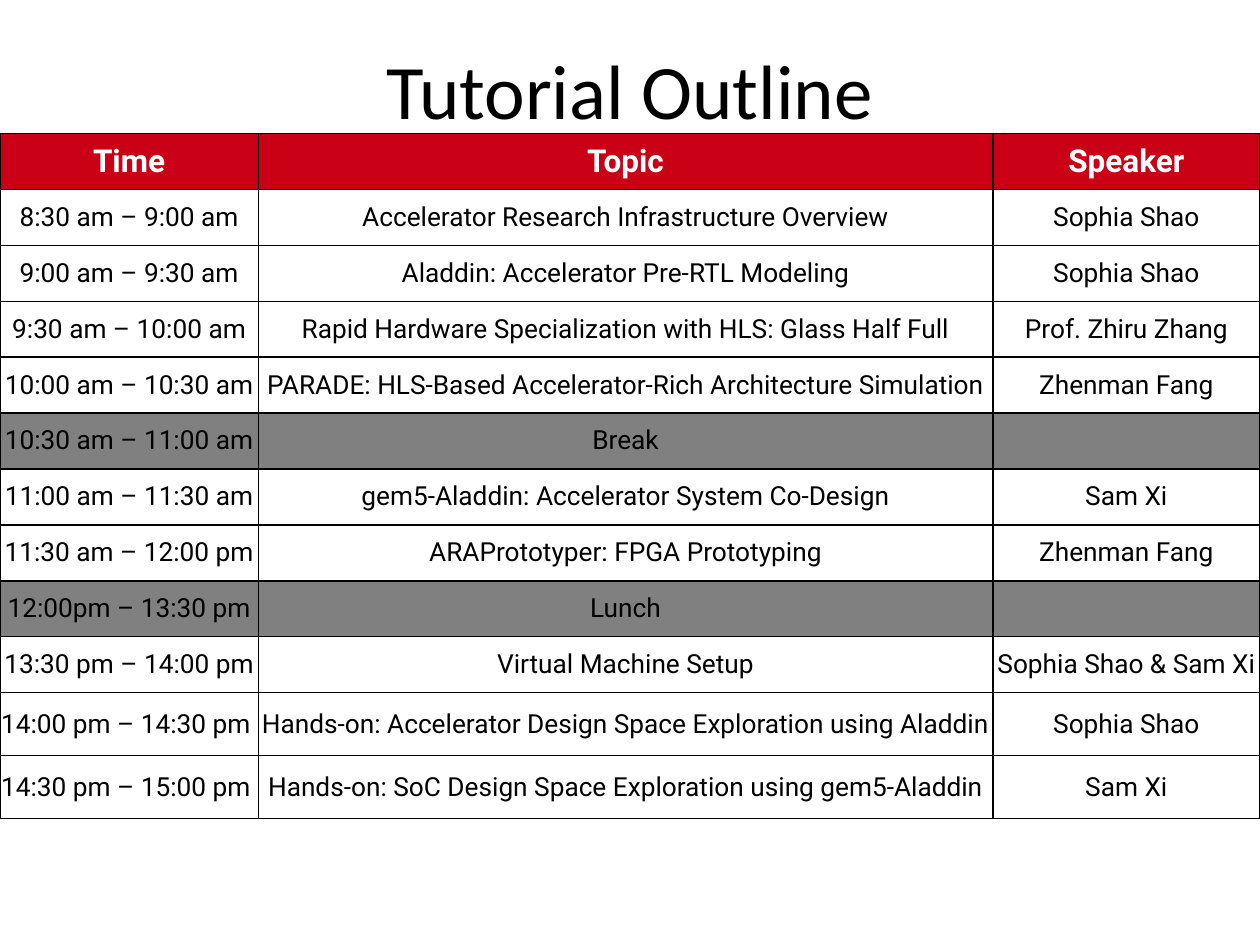
from lxml import etree
from pptx import Presentation
from pptx.dml.color import RGBColor
from pptx.enum.text import MSO_ANCHOR, PP_ALIGN
from pptx.oxml.ns import qn
from pptx.util import Inches, Pt

CENTER = PP_ALIGN.CENTER
MIDDLE = MSO_ANCHOR.MIDDLE
RED = RGBColor(0xC9, 0x00, 0x16)
GRAY = RGBColor(0x80, 0x80, 0x80)
BLACK = RGBColor(0, 0, 0)
WHITE = RGBColor(0xFF, 0xFF, 0xFF)

TITLE = "Tutorial Outline"
HEAD = ("Time", "Topic", "Speaker")
TALKS = [
    ("8:30 am – 9:00 am", "Accelerator Research Infrastructure Overview", "Sophia Shao"),
    ("9:00 am – 9:30 am", "Aladdin: Accelerator Pre-RTL Modeling", "Sophia Shao"),
    ("9:30 am – 10:00 am", "Rapid Hardware Specialization with HLS: Glass Half Full",
     "Prof. Zhiru Zhang"),
    ("10:00 am – 10:30 am", "PARADE: HLS-Based Accelerator-Rich Architecture Simulation",
     "Zhenman Fang"),
    ("10:30 am – 11:00 am", "Break", ""),
    ("11:00 am – 11:30 am", "gem5-Aladdin: Accelerator System Co-Design", "Sam Xi"),
    ("11:30 am – 12:00 pm", "ARAPrototyper: FPGA Prototyping", "Zhenman Fang"),
    ("12:00pm – 13:30 pm", "Lunch", ""),
    ("13:30 pm – 14:00 pm", "Virtual Machine Setup", "Sophia Shao & Sam Xi"),
    ("14:00 pm – 14:30 pm ", "Hands-on: Accelerator Design Space Exploration using Aladdin",
     "Sophia Shao"),
    ("14:30 pm – 15:00 pm ", "Hands-on: SoC Design Space Exploration using gem5-Aladdin",
     "Sam Xi"),
]
WIDE, HIGH = 10, 7.5
COLS = (2.05, 5.83, 2.12)
TOP, TALL, LAST = 1.06, 5.44, 0.5


def write(frame, text, size=15, font="Roboto", color=BLACK, bold=False):
    line = frame.paragraphs[0]
    line.alignment = CENTER
    line.font.size = Pt(size)
    if text:
        run = line.add_run()
        run.text = text
        run.font.name = font
        run.font.size = Pt(size)
        run.font.bold = bold
        run.font.color.rgb = color


def frame_cell(cell):
    props = cell._tc.get_or_add_tcPr()
    for side in ("lnL", "lnR", "lnT", "lnB"):
        edge = etree.SubElement(props, qn("a:" + side), w=str(Pt(1)))
        fill = etree.SubElement(edge, qn("a:solidFill"))
        etree.SubElement(fill, qn("a:srgbClr"), val=str(BLACK))


def paint(cell, color):
    if color is None:
        cell.fill.background()
    else:
        cell.fill.solid()
        cell.fill.fore_color.rgb = color


def main():
    deck = Presentation()
    deck.slide_width, deck.slide_height = Inches(WIDE), Inches(HIGH)
    slide = deck.slides.add_slide(deck.slide_layouts[5])

    title = slide.shapes.title
    title.left, title.top = Inches(0.05 * WIDE), Inches(0.08)
    title.width, title.height = Inches(0.9 * WIDE), Inches(1.25)
    title.text_frame.vertical_anchor = MIDDLE
    write(title.text_frame, TITLE, size=44, font="Calibri")

    rows = [HEAD] + TALKS
    table = slide.shapes.add_table(
        len(rows), len(COLS), 0, Inches(TOP), Inches(WIDE), Inches(TALL)).table
    table.horz_banding = False
    for col, width in zip(table.columns, COLS):
        col.width = Inches(width)

    base = (TALL - 2 * LAST) / (len(rows) - 2)
    for r, row in enumerate(rows):
        table.rows[r].height = Inches(LAST if r >= len(rows) - 2 else base)
        top = r == 0
        color = RED if top else None if row[-1] else GRAY
        for c, text in enumerate(row):
            cell = table.cell(r, c)
            cell.vertical_anchor = MIDDLE
            frame_cell(cell)
            paint(cell, color)
            if top:
                write(cell.text_frame, text, size=18, color=WHITE, bold=True)
            else:
                cell.margin_left = cell.margin_right = 0
                cell.margin_top = cell.margin_bottom = 0
                write(cell.text_frame, text)

    deck.save("out.pptx")


if __name__ == "__main__":
    main()
